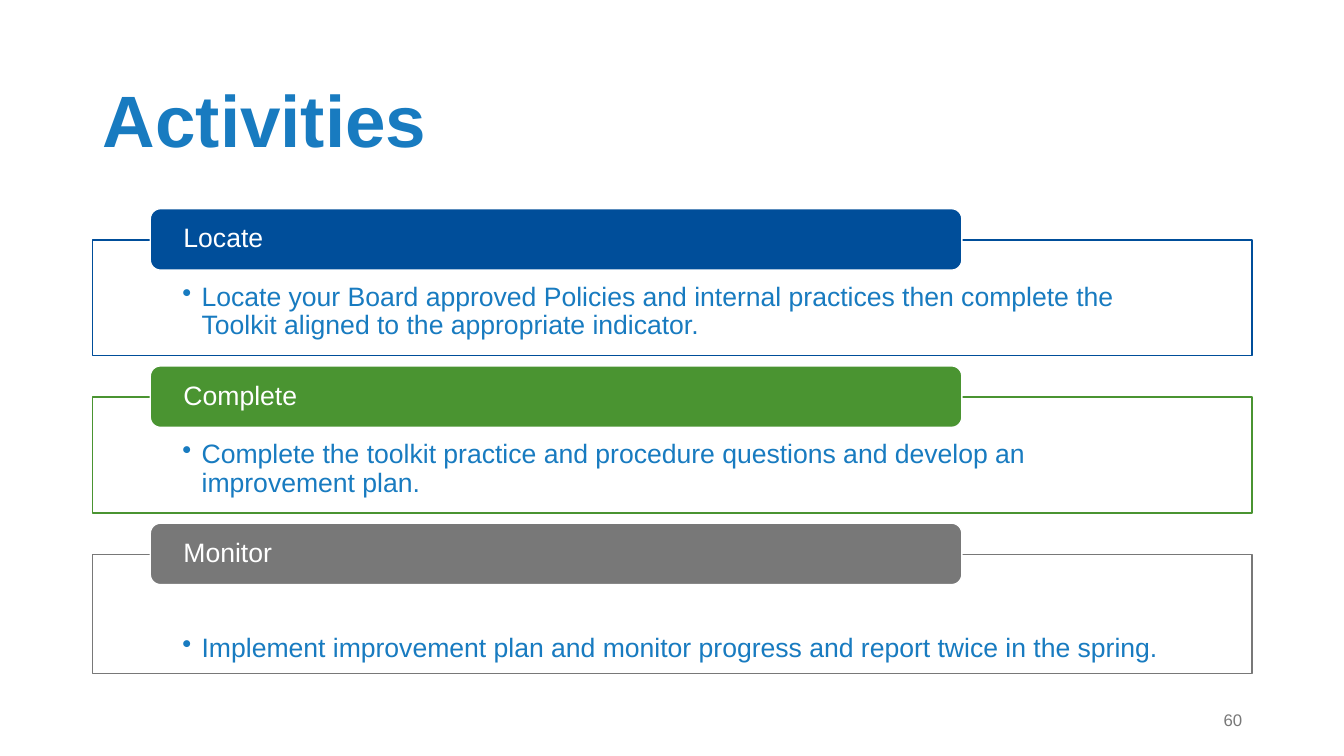
from dataclasses import dataclass

import pptx
import pptx.dml.color
import pptx.enum.shapes
import pptx.enum.text
import pptx.oxml
import pptx.oxml.ns
import pptx.util
from pptx.enum.text import MSO_ANCHOR, PP_ALIGN
from pptx.util import Inches


@dataclass(frozen=True)
class Theme:
    """Colours, type sizes and font of the slide."""
    font: str = "Arial"
    blue: str = "187BC0"
    navy: str = "004E9A"
    green: str = "4A9431"
    grey: str = "787878"
    white: str = "FFFFFF"
    title: int = 52
    body: int = 19
    small: int = 12


THEME = Theme()
ACTIVITIES = [
    ("Locate", "Locate your Board approved Policies and internal practices then "
     "complete the Toolkit aligned to the appropriate indicator.", THEME.navy, 1.15, 0.43),
    ("Complete", "Complete the toolkit practice and procedure questions and develop "
     "an improvement plan.", THEME.green, 1.15, 0.43),
    ("Monitor", "Implement improvement plan and monitor progress and report twice "
     "in the spring.", THEME.grey, 1.18, 0.79),
]


def rgb(value):
    """Return a colour from its hex value."""
    return pptx.dml.color.RGBColor.from_string(value)


def add_element(parent, tag, **attrs):
    """Append a DrawingML element with attributes to a parent."""
    el = pptx.oxml.parse_xml(f"<a:{tag} {pptx.oxml.ns.nsdecls('a')}/>")
    for name, value in attrs.items():
        el.set(name, str(value))
    parent.append(el)


def set_text(sp, text, size, color, anchor=MSO_ANCHOR.MIDDLE, align=PP_ALIGN.LEFT,
             bold=False, insets=(0.1, 0.05, 0.1, 0.05), bullet=False):
    """Write one formatted paragraph into a shape."""
    tf = sp.text_frame
    left, top, right, bottom = (Inches(v) for v in insets)
    frame = {"word_wrap": True, "auto_size": pptx.enum.text.MSO_AUTO_SIZE.NONE,
             "vertical_anchor": anchor, "margin_left": left, "margin_top": top,
             "margin_right": right, "margin_bottom": bottom}
    for name, value in frame.items():
        setattr(tf, name, value)
    p = tf.paragraphs[0]
    p.alignment, p.line_spacing = align, 0.9
    if bullet:
        pPr = p._p.get_or_add_pPr()
        pPr.set("marL", str(Inches(0.19)))
        pPr.set("indent", str(Inches(-0.19)))
        add_element(pPr, "buChar", char="•")
    r = p.add_run()
    r.text = text
    for name, value in {"name": THEME.font, "size": pptx.util.Pt(size), "bold": bold}.items():
        setattr(r.font, name, value)
    r.font.color.rgb = rgb(color)


def add_box(s, kind, box, fill, line):
    """Add a filled and outlined shape without shadow."""
    sp = s.shapes.add_shape(kind, *(Inches(v) for v in box))
    sp.shadow.inherit = False
    sp.fill.solid()
    sp.fill.fore_color.rgb = rgb(fill)
    sp.line.color.rgb = rgb(line)
    sp.line.width = pptx.util.Pt(1)
    return sp


def add_title(s, box, text):
    """Place and format the title placeholder."""
    sp = s.shapes.title
    for name, value in zip(("left", "top", "width", "height"), box):
        setattr(sp, name, Inches(value))
    set_text(sp, text, THEME.title, THEME.blue, bold=True)


def add_activity(s, box, label, text, color, inset_top):
    """Add an outlined card with a coloured label over its top edge."""
    left, top, width, height = box
    shapes = pptx.enum.shapes.MSO_SHAPE
    card = add_box(s, shapes.RECTANGLE, box, THEME.white, color)
    add_element(card.element.spPr.find(".//" + pptx.oxml.ns.qn("a:srgbClr")),
                "alpha", val=90000)
    set_text(card, text, THEME.body, THEME.blue, anchor=MSO_ANCHOR.TOP,
             insets=(0.89, inset_top, 0.89, 0.15), bullet=True)
    tab = add_box(s, shapes.ROUNDED_RECTANGLE,
                  (left + 0.57, top - 0.31, width * 0.7, 0.61), color, THEME.white)
    set_text(tab, label, THEME.body, THEME.white, insets=(0.3, 0, 0.3, 0))


def add_activities(s, box, pitch):
    """Stack the activity cards at an equal pitch."""
    left, top, width = box
    for i, (label, text, color, height, inset_top) in enumerate(ACTIVITIES):
        add_activity(s, (left, top + i * pitch, width, height),
                     label, text, color, inset_top)


def add_page_number(s, box, number):
    """Add the right-aligned page number."""
    sp = s.shapes.add_textbox(*(Inches(v) for v in box))
    set_text(sp, number, THEME.small, THEME.grey, align=PP_ALIGN.RIGHT)


def main():
    """Build and save the slide."""
    prs = pptx.Presentation()
    prs.slide_width, prs.slide_height = Inches(13.33), Inches(7.5)
    s = prs.slides.add_slide(prs.slide_layouts[5])
    add_title(s, (0.92, 0.61, 11.5, 1.24), "Activities")
    add_activities(s, (0.92, 2.38, 11.5), 1.56)
    add_page_number(s, (9.42, 6.95, 3, 0.4), "60")
    prs.save("out.pptx")


if __name__ == "__main__":
    main()
